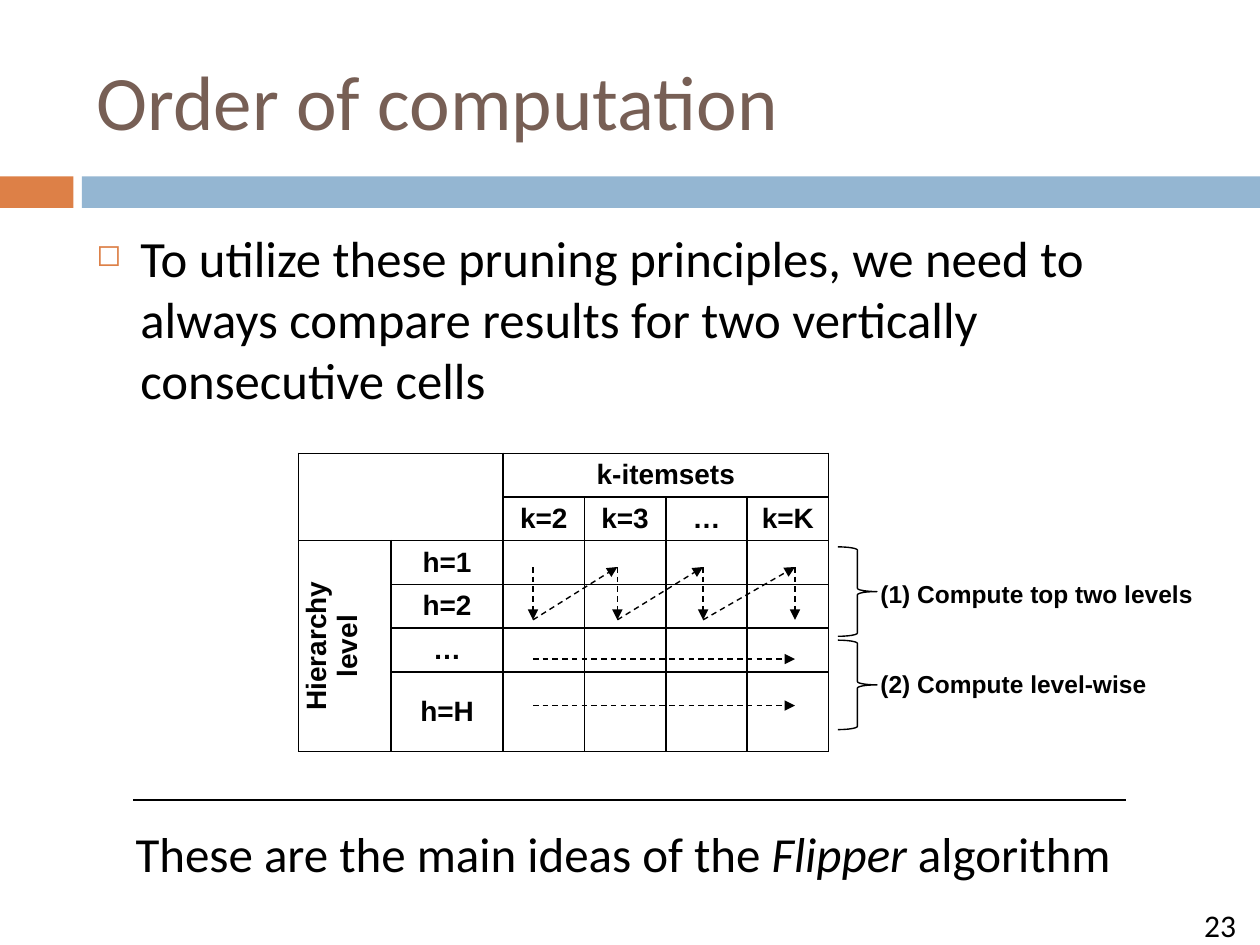
from lxml import etree
from pptx import Presentation
from pptx.dml.color import RGBColor
from pptx.enum.dml import MSO_LINE
from pptx.enum.shapes import MSO_CONNECTOR, MSO_SHAPE
from pptx.enum.text import MSO_ANCHOR, PP_ALIGN
from pptx.oxml import parse_xml
from pptx.oxml.ns import nsdecls, qn
from pptx.util import Pt

MIDDLE = MSO_ANCHOR.MIDDLE
LEFT, CENTER = PP_ALIGN.LEFT, PP_ALIGN.CENTER
DASH = MSO_LINE.DASH
STRAIGHT = MSO_CONNECTOR.STRAIGHT
RECTANGLE, RIGHT_BRACE = MSO_SHAPE.RECTANGLE, MSO_SHAPE.RIGHT_BRACE
BLACK, BROWN, ORANGE, BLUE = "000000", "775F55", "DD8047", "94B6D2"


def write(paragraph, text, size=16, font="Arial", color=BLACK, bold=False,
          italic=False, align=LEFT):
    paragraph.alignment = align
    run = paragraph.add_run()
    run.text = text
    run.font.size, run.font.name = Pt(size), font
    run.font.bold, run.font.italic = bold, italic
    run.font.color.rgb = RGBColor.from_string(color)


def draw_line(start, end, arrow=False):
    line = slide.shapes.add_connector(STRAIGHT, *map(Pt, start + end))
    line.line.width = Pt(0.79)
    line.line.color.rgb = RGBColor.from_string(BLACK)
    if arrow:
        line.line.dash_style = DASH
        etree.SubElement(line.line._get_or_add_ln(), qn("a:tailEnd"), type="triangle")
    etree.SubElement(line._element.spPr, qn("a:effectLst"))


prs = Presentation()
prs.slide_width, prs.slide_height = Pt(720), Pt(540)
slide = prs.slides.add_slide(prs.slide_layouts[5])

# Colour band below the title
for left, width, color in [(0, 42, ORANGE), (46.8, 673.2, BLUE)]:
    band = slide.shapes.add_shape(RECTANGLE, Pt(left), Pt(100.8), Pt(width), Pt(18))
    band.shadow.inherit = False
    band.fill.solid()
    band.fill.fore_color.rgb = RGBColor.from_string(color)
    band.line.fill.background()

# Title
title = slide.shapes.title
title.left, title.top, title.width, title.height = Pt(48), Pt(18), Pt(642), Pt(78)
title.text_frame.vertical_anchor = MIDDLE
write(title.text_frame.paragraphs[0], "Order of computation", size=44,
      font="Calibri", color=BROWN)

# Bulleted statement
statement = slide.shapes.add_textbox(Pt(48), Pt(126), Pt(642), Pt(120)).text_frame
statement.word_wrap = True
bullet = statement.paragraphs[0]
bullet.space_before = Pt(7)
write(bullet, "To utilize these pruning principles, we need to always compare "
      "results for two vertically consecutive cells", size=29, font="Calibri")
bullet_format = bullet._p.get_or_add_pPr()
bullet_format.set("marL", str(Pt(25.2)))
bullet_format.set("indent", str(-Pt(25.2)))
for xml in (f'<a:buClr {nsdecls("a")}><a:srgbClr val="{ORANGE}"/></a:buClr>',
            f'<a:buSzPct {nsdecls("a")} val="60000"/>',
            f'<a:buChar {nsdecls("a")} char="◻"/>'):
    bullet_format.append(parse_xml(xml))

# Grid of hierarchy levels against itemset sizes
column_widths = [52.8, 64] + [46.5] * 4
row_heights = [25] * 5 + [45.7]
grid = slide.shapes.add_table(6, 6, Pt(170.7), Pt(259), Pt(sum(column_widths)),
                              Pt(sum(row_heights))).table
grid.first_row = grid.horz_banding = False
for column, width in zip(grid.columns, column_widths):
    column.width = Pt(width)
for row, height in zip(grid.rows, row_heights):
    row.height = Pt(height)

for cell in grid.iter_cells():
    cell.margin_top = cell.margin_bottom = Pt(1.2)
    cell.vertical_anchor = MIDDLE
    for side in ("lnL", "lnR", "lnT", "lnB"):
        cell._tc.get_or_add_tcPr().append(parse_xml(
            f'<a:{side} {nsdecls("a")} w="{Pt(1)}"><a:solidFill>'
            f'<a:srgbClr val="{BLACK}"/></a:solidFill></a:{side}>'))
    cell.fill.background()

for first, last in [((0, 0), (1, 1)), ((0, 2), (0, 5)), ((2, 0), (5, 0))]:
    grid.cell(*first).merge(grid.cell(*last))

headings = {(0, 2): "k-itemsets", (2, 0): "Hierarchy level"}
headings.update({(1, 2 + i): k for i, k in enumerate(["k=2", "k=3", "…", "k=K"])})
headings.update({(2 + i, 1): h for i, h in enumerate(["h=1", "h=2", "…", "h=H"])})
for position, text in headings.items():
    write(grid.cell(*position).text_frame.paragraphs[0], text, bold=True, align=CENTER)
for position, direction in [((2, 0), "vert270"), ((4, 1), "eaVert")]:
    grid.cell(*position)._tc.get_or_add_tcPr().set("vert", direction)

# Zigzag through the top two levels, then one sweep per level
zigzag_x = [304.6, 352.8, 401.8, 454.3]
level_1, level_2 = 324, 354.2
for i, x in enumerate(zigzag_x):
    draw_line((x, level_1), (x, level_2), arrow=True)
    if i + 1 < len(zigzag_x):
        draw_line((x, level_2), (zigzag_x[i + 1], level_1), arrow=True)
for y in (376.6, 403.2):
    draw_line((zigzag_x[0], y), (zigzag_x[-1], y), arrow=True)

# Braces with the two steps
steps = [("(1) Compute top two levels", 312.5, 327.6),
         ("(2) Compute level-wise", 365.8, 378.7)]
for text, brace_top, label_top in steps:
    brace = slide.shapes.add_shape(RIGHT_BRACE, Pt(478.8), Pt(brace_top), Pt(22.3), Pt(51.1))
    brace.shadow.inherit = False
    brace.fill.background()
    brace.line.color.rgb = RGBColor.from_string(BLACK)
    brace.line.width = Pt(0.79)
    label = slide.shapes.add_textbox(Pt(496), Pt(label_top), Pt(209.5), Pt(24.5)).text_frame
    label.word_wrap = True
    write(label.paragraphs[0], text, size=14, bold=True)

# Conclusion under a rule
draw_line((76.3, 457.2), (643.7, 457.2))
conclusion = slide.shapes.add_textbox(Pt(14.4), Pt(467.3), Pt(683.3), Pt(41)).text_frame
conclusion.word_wrap = True
for text, italic in [("These are the main ideas of the ", False), ("Flipper", True),
                     (" algorithm", False)]:
    write(conclusion.paragraphs[0], text, size=28, font="Calibri", italic=italic,
          align=CENTER)

# Slide number
number = slide.shapes.add_textbox(Pt(681), Pt(514), Pt(41.8), Pt(19.4)).text_frame
number.word_wrap = True
write(number.paragraphs[0], "23", size=18, font="Calibri")

prs.save("out.pptx")
